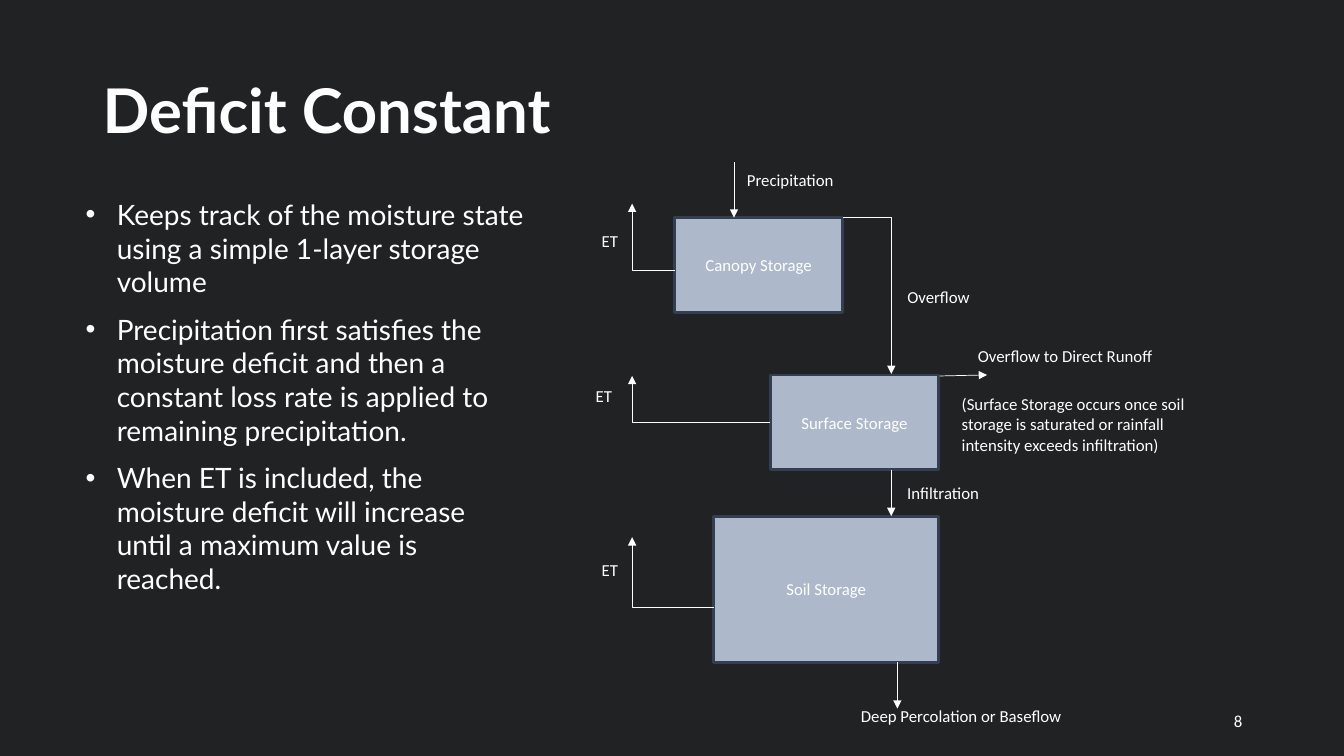
from pptx import Presentation
from pptx.dml.color import RGBColor
from pptx.enum.shapes import MSO_CONNECTOR as Connector, MSO_SHAPE as Shape
from pptx.enum.text import MSO_ANCHOR as Anchor, PP_ALIGN as Align
from pptx.oxml.ns import qn
from pptx.util import Inches, Pt
from lxml.etree import SubElement

WHITE = "FFFFFF"
BODY_POINTS = [
    "Keeps track of the moisture state using a simple 1-layer storage volume",
    "Precipitation first satisfies the moisture deficit and then a constant loss rate "
    "is applied to remaining precipitation.",
    "When ET is included, the moisture deficit will increase until a maximum value is reached.",
]
STORAGES = [
    ("Canopy Storage", 6.69, 2.16, 1.67, 0.94),
    ("Surface Storage", 7.64, 3.72, 1.67, 0.94),
    ("Soil Storage", 7.08, 5.12, 2.23, 1.45),
]
STRAIGHT_FLOWS = [
    (7.28, 1.61, 7.28, 2.16),
    (8.84, 4.66, 8.84, 5.12),
    (9.32, 3.73, 9.79, 3.72),
    (8.9, 6.57, 8.9, 7.03),
]
BENT_FLOWS = [
    (8.36, 2.16, 8.84, 3.71),
    (6.69, 2.68, 6.27, 2.02),
    (7.64, 4.19, 6.27, 3.73),
    (7.08, 6.03, 6.27, 5.33),
]
LABELS = [
    ("Precipitation", 7.31, 1.63, 1.15, 0.3),
    ("Overflow", 8.9, 2.8, 0.89, 0.3),
    ("Infiltration", 8.9, 4.74, 1.06, 0.3),
    ("ET", 5.87, 2.24, 0.43, 0.3),
    ("ET", 5.81, 3.78, 0.43, 0.3),
    ("ET", 5.87, 5.5, 0.43, 0.3),
    ("Overflow to Direct Runoff", 9.6, 3.38, 2.23, 0.3),
    ("Deep Percolation or Baseflow", 8.44, 6.95, 2.23, 0.3),
    ("(Surface Storage occurs once soil storage is saturated or rainfall intensity "
     "exceeds infiltration)", 9.44, 3.86, 2.75, 0.71),
]


def color(value):
    return RGBColor.from_string(value)


def style(paragraph, size=12, name="Calibri", bold=False):
    font = paragraph.font
    font.size, font.name, font.bold = Pt(size), name, bold
    font.color.rgb = color(WHITE)


def add_text(slide, text, left, top, width, height, anchor=Anchor.TOP, align=Align.LEFT, **font):
    box = slide.shapes.add_textbox(Inches(left), Inches(top), Inches(width), Inches(height))
    frame = box.text_frame
    frame.word_wrap = True
    frame.vertical_anchor = anchor
    paragraph = frame.paragraphs[0]
    paragraph.text = text
    paragraph.alignment = align
    style(paragraph, **font)
    return frame


def add_bullets(slide, points, left, top, width, height):
    box = slide.shapes.add_textbox(Inches(left), Inches(top), Inches(width), Inches(height))
    frame = box.text_frame
    frame.word_wrap = True
    for index, point in enumerate(points):
        paragraph = frame.add_paragraph() if index else frame.paragraphs[0]
        paragraph.text = point
        if index:
            paragraph.space_before = Pt(10)
        properties = paragraph._p.get_or_add_pPr()
        properties.set("marL", str(Inches(0.31)))
        properties.set("indent", str(-Inches(0.31)))
        SubElement(properties, qn("a:buFont")).set("typeface", "Arial")
        SubElement(properties, qn("a:buChar")).set("char", "•")
        style(paragraph, 20, "Lato")


def add_storage(slide, text, left, top, width, height):
    shape = slide.shapes.add_shape(
        Shape.RECTANGLE, Inches(left), Inches(top), Inches(width), Inches(height))
    shape.shadow.inherit = False
    shape.fill.solid()
    shape.fill.fore_color.rgb = color("ADB9CA")
    shape.line.color.rgb = color("333F50")
    shape.line.width = Pt(2)
    frame = shape.text_frame
    frame.vertical_anchor = Anchor.MIDDLE
    paragraph = frame.paragraphs[0]
    paragraph.text = text
    paragraph.alignment = Align.CENTER
    style(paragraph)


def add_flow(slide, kind, *ends):
    connector = slide.shapes.add_connector(kind, *map(Inches, ends))
    connector.line.color.rgb = color(WHITE)
    connector.line.width = Pt(0.5)
    properties = connector._element.spPr
    SubElement(properties.find(qn("a:ln")), qn("a:tailEnd")).set("type", "triangle")
    SubElement(properties, qn("a:effectLst"))
    if kind == Connector.ELBOW:
        guide = SubElement(properties.prstGeom.get_or_add_avLst(), qn("a:gd"))
        guide.set("name", "adj1")
        guide.set("fmla", "val 100000")


def main():
    presentation = Presentation()
    presentation.slide_width = Inches(13.33)
    presentation.slide_height = Inches(7.5)
    slide = presentation.slides.add_slide(presentation.slide_layouts[6])
    slide.background.fill.solid()
    slide.background.fill.fore_color.rgb = color("202223")

    title = add_text(slide, "Deficit Constant", 0.92, 0.4, 11.5, 1.45,
                     anchor=Anchor.MIDDLE, size=44, name="Lato", bold=True)
    title.paragraphs[0].line_spacing = 0.9
    add_bullets(slide, BODY_POINTS, 0.75, 1.91, 4.58, 4.34)

    for storage in STORAGES:
        add_storage(slide, *storage)
    for ends in STRAIGHT_FLOWS:
        add_flow(slide, Connector.STRAIGHT, *ends)
    for ends in BENT_FLOWS:
        add_flow(slide, Connector.ELBOW, *ends)
    for label in LABELS:
        add_text(slide, *label)

    add_text(slide, "8", 9.42, 6.95, 3, 0.4, anchor=Anchor.MIDDLE, align=Align.RIGHT)
    presentation.save("out.pptx")


if __name__ == "__main__":
    main()
